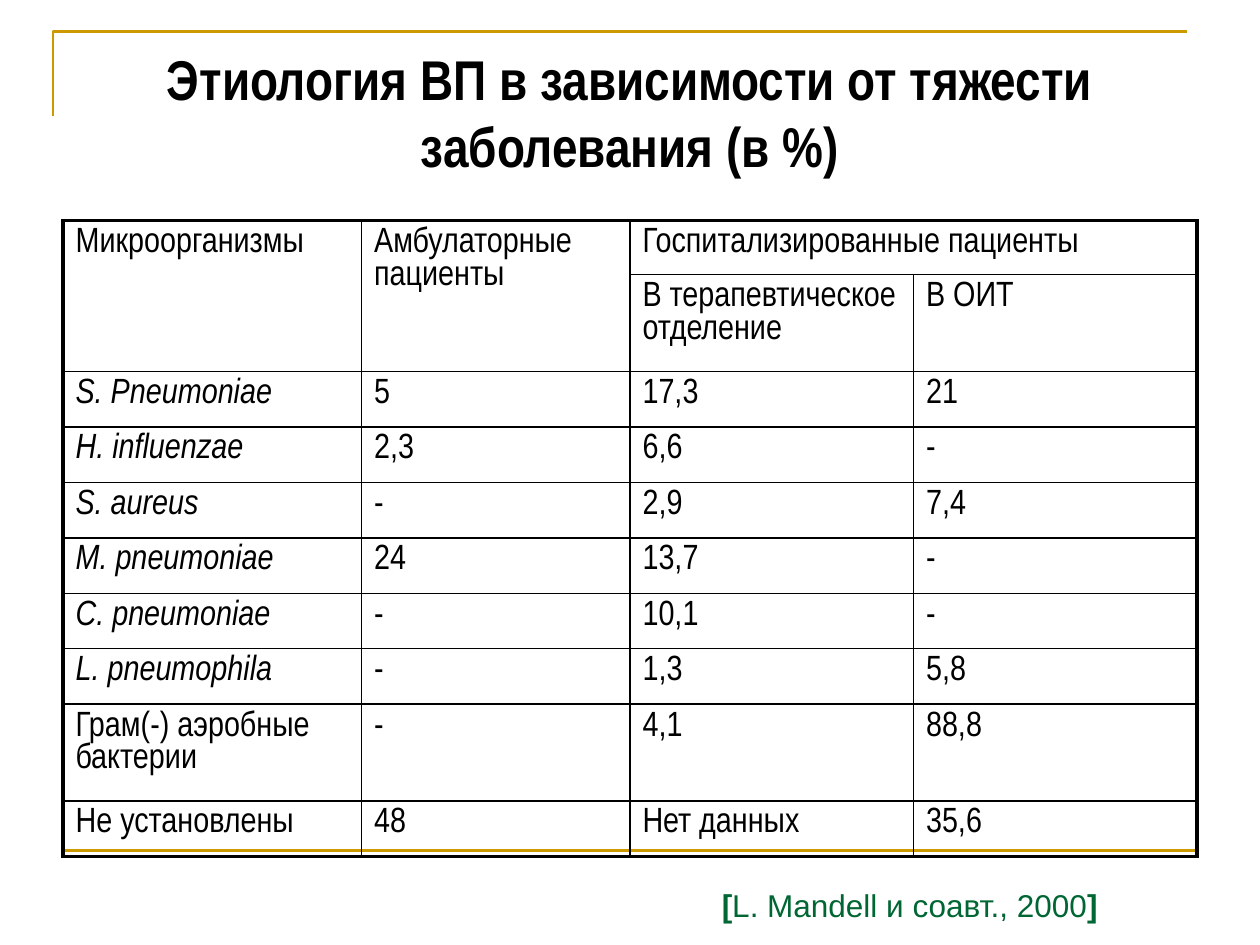
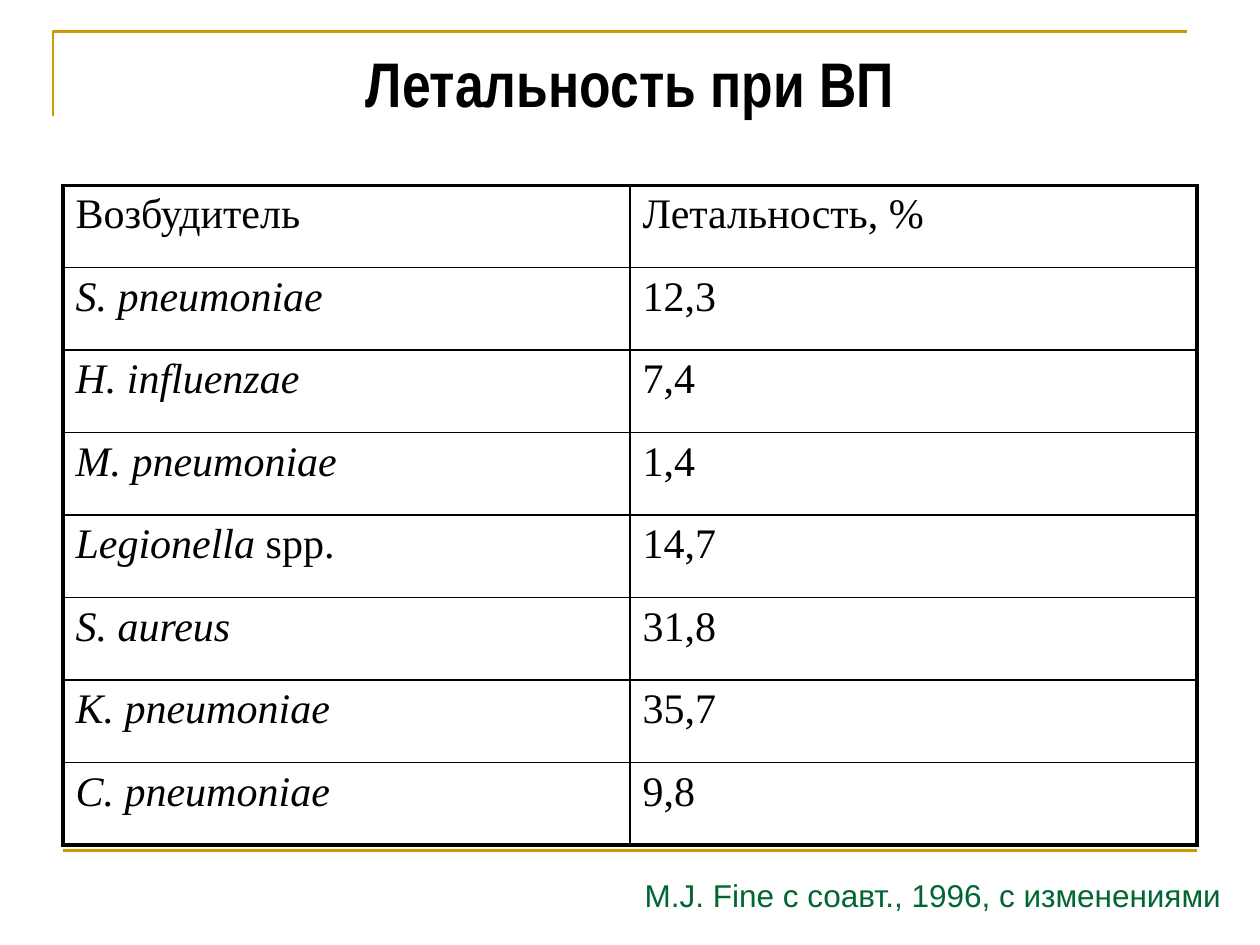
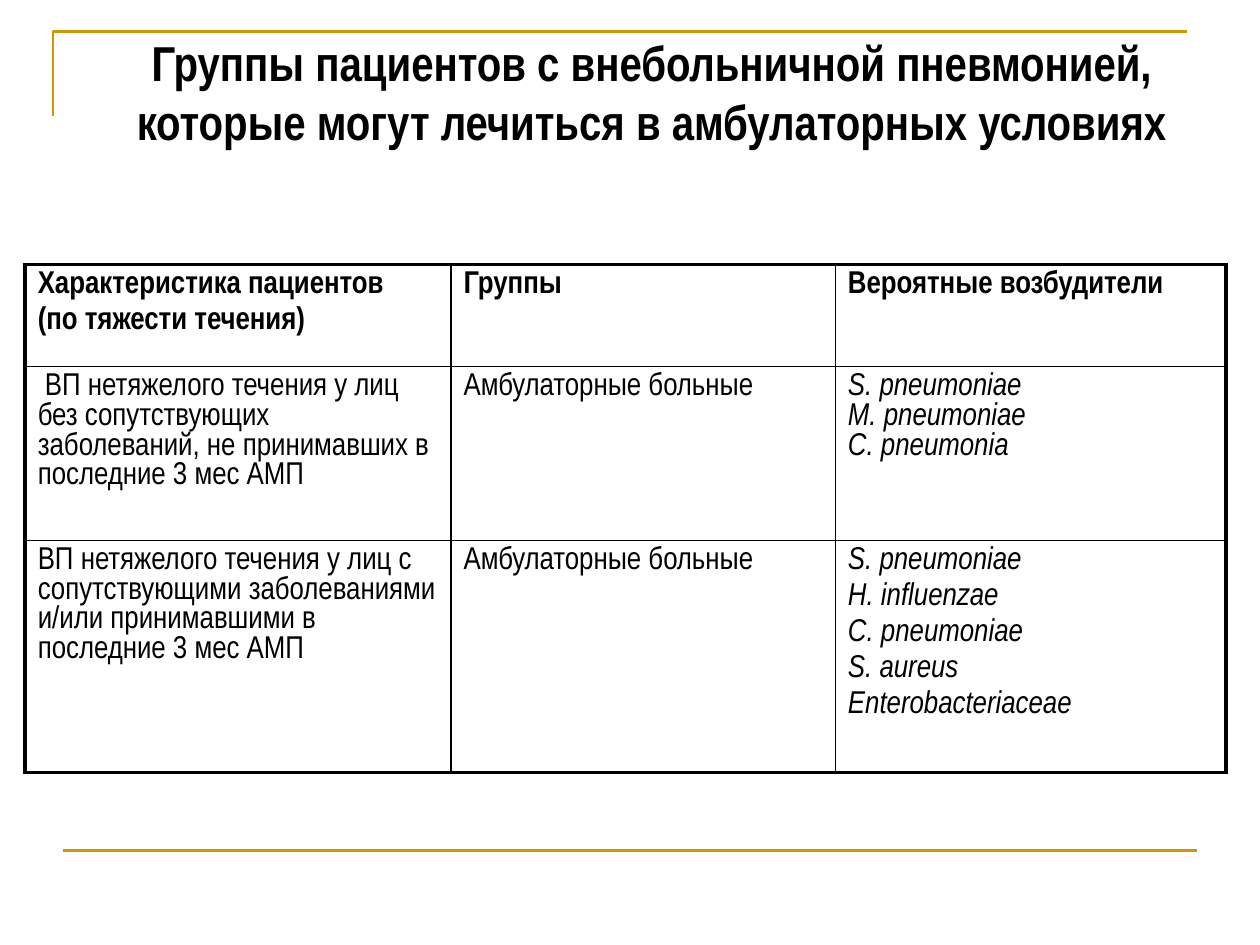
from dataclasses import dataclass

from lxml import etree
from pptx import Presentation
from pptx import util as u
from pptx.dml.color import RGBColor
from pptx.enum import shapes, text
from pptx.oxml.ns import qn


@dataclass(frozen=True)
class Theme:
    ink: str = "000000"
    gold: str = "CC9900"
    green: str = "006633"
    narrow: str = "Arial Narrow"
    serif: str = "Times New Roman"
    sans: str = "Arial"
    source_size: int = 18
    frame_line: float = 1.5
    outer_border: float = 2.25
    inner_border: float = 1


THEME = Theme()

ETIOLOGY = [
    ["Микроорганизмы", "Амбулаторные пациенты", "Госпитализированные пациенты", ""],
    ["", "", "В терапевтическое отделение", "В ОИТ"],
    ["*S. Pneumoniae*", "5", "17,3", "21"],
    ["*H. influenzae*", "2,3", "6,6", "-"],
    ["*S. aureus*", "-", "2,9", "7,4"],
    ["*M. pneumoniae*", "24", "13,7", "-"],
    ["*C. pneumoniae*", "-", "10,1", "-"],
    ["*L. pneumophila*", "-", "1,3", "5,8"],
    ["Грам(-) аэробные бактерии", "-", "4,1", "88,8"],
    ["Не установлены", "48", "Нет данных", "35,6"],
]

MORTALITY = [
    ["Возбудитель", "Летальность, %"],
    ["*S. pneumoniae*", "12,3"],
    ["*H. influenzae*", "7,4"],
    ["*M. pneumoniae*", "1,4"],
    ["*Legionella *spp.", "14,7"],
    ["*S. aureus*", "31,8"],
    ["*K. pneumoniae*", "35,7"],
    ["*C. pneumoniae*", "9,8"],
]

GROUPS = [
    ["Характеристика пациентов\n(по тяжести течения)", "Группы", "Вероятные возбудители"],
    [" ВП нетяжелого течения у лиц без сопутствующих заболеваний, "
     "не принимавших в последние 3 мес АМП",
     "Амбулаторные больные",
     "*S. pneumoniae*\v*M. pneumoniae*\v*C. pneumonia*"],
    ["ВП нетяжелого течения у лиц с сопутствующими заболеваниями "
     "и/или принимавшими в последние 3 мес АМП",
     "Амбулаторные больные",
     "*S. pneumoniae*\n*H. influenzae*\n*C. pneumoniae*\n*S. aureus*\n*Enterobacteriaceae*"],
]


def style_font(font, name, size, color=THEME.ink, bold=False):
    font.name = name
    font.size = u.Pt(size)
    font.bold = bold
    font.color.rgb = RGBColor.from_string(color)


def style_line(shape):
    shape.line.color.rgb = RGBColor.from_string(THEME.gold)
    shape.line.width = u.Pt(THEME.frame_line)


def add_frame(layout, page):
    """Draw the gold corner and rule on a page, then move them to its layout."""
    left, top, right, bottom = (u.Inches(v) for v in (0.42, 0.25, 9.42, 0.92))
    builder = page.shapes.build_freeform(left, bottom)
    builder.add_line_segments([(left, top), (right, top)], close=False)
    corner = builder.convert_to_shape()
    corner.fill.background()
    corner.shadow.inherit = False

    rule = page.shapes.add_connector(
        shapes.MSO_CONNECTOR.STRAIGHT,
        u.Inches(0.5), u.Inches(6.75), u.Inches(9.5), u.Inches(6.75))
    for shape in (corner, rule):
        style_line(shape)
        layout.shapes.element.append(shape.element)
    etree.SubElement(rule.element.spPr, qn("a:effectLst"))


def set_title(page, wording, size, left=0.5, top=0.3, height=1.25):
    title = page.shapes.title
    title.left, title.top = u.Inches(left), u.Inches(top)
    title.width, title.height = u.Inches(9), u.Inches(height)
    frame = title.text_frame
    frame.text = wording
    frame.vertical_anchor = text.MSO_ANCHOR.TOP
    frame.auto_size = text.MSO_AUTO_SIZE.NONE
    para = frame.paragraphs[0]
    para.alignment = text.PP_ALIGN.CENTER
    style_font(para.font, THEME.narrow, size, bold=True)


def add_source(page, left, top, width, spans, wrap=True, align=text.PP_ALIGN.LEFT):
    """Add the source line; spans are (wording, bold) pairs."""
    box = page.shapes.add_textbox(*(u.Inches(v) for v in (left, top, width, 0.4)))
    frame = box.text_frame
    frame.word_wrap = wrap
    frame.auto_size = text.MSO_AUTO_SIZE.SHAPE_TO_FIT_TEXT
    para = frame.paragraphs[0]
    para.alignment = align
    style_font(para.font, THEME.sans, THEME.source_size, THEME.green)
    for wording, bold in spans:
        span = para.add_run()
        span.text = wording
        span.font.bold = bold


def set_borders(cell, widths):
    """Set left, right, top and bottom border widths in points."""
    properties = cell._tc.get_or_add_tcPr()
    for side, width in zip("LRTB", widths):
        line = etree.SubElement(properties, qn(f"a:ln{side}"), w=str(u.Pt(width)))
        fill = etree.SubElement(line, qn("a:solidFill"))
        etree.SubElement(fill, qn("a:srgbClr"), val=THEME.ink)


def write_cell(cell, wording, font_name, size, bold):
    """Write paragraphs split by newlines; asterisks enclose italics."""
    frame = cell.text_frame
    for index, block in enumerate(wording.split("\n")):
        para = frame.add_paragraph() if index else frame.paragraphs[0]
        para.space_before = u.Pt(size * 0.2)
        style_font(para.font, font_name, size, bold=bold)
        for row, line in enumerate(block.split("\v")):
            if row:
                para.add_line_break()
            for part, piece in enumerate(line.split("*")):
                if piece:
                    span = para.add_run()
                    span.text = piece
                    span.font.italic = part % 2 == 1


def add_grid(page, left, top, columns, heights, rows, font_name, size,
             bold_header=False, merges=()):
    """Add a table with a heavy outline; merges are pairs of (row, column)."""
    table = page.shapes.add_table(
        len(rows), len(columns), u.Inches(left), u.Inches(top),
        u.Inches(sum(columns)), u.Inches(sum(heights))).table
    table.first_row = table.horz_banding = False
    for column, width in zip(table.columns, columns):
        column.width = u.Inches(width)
    for row, height in zip(table.rows, heights):
        row.height = u.Inches(height)
    for first, last in merges:
        table.cell(*first).merge(table.cell(*last))

    last_row, last_column = len(rows) - 1, len(columns) - 1
    for r, row in enumerate(rows):
        for c, wording in enumerate(row):
            cell = table.cell(r, c)
            right = c + cell.span_width - 1 if cell.is_merge_origin else c
            at_edge = (c == 0, right == last_column, r == 0, r == last_row)
            set_borders(cell, [THEME.outer_border if edge else THEME.inner_border
                               for edge in at_edge])
            cell.fill.background()
            if wording:
                write_cell(cell, wording, font_name, size, bold_header and r == 0)


def build_etiology(page):
    set_title(page, "Этиология ВП в зависимости от тяжести заболевания (в %)", 32)
    add_grid(page, 0.5, 1.75, [2.37, 2.13, 2.25, 2.25],
             [0.43, 0.77] + [0.44] * 6 + [0.77, 0.44],
             ETIOLOGY, THEME.narrow, 20,
             merges=[((0, 0), (1, 0)), ((0, 1), (1, 1)), ((0, 2), (0, 3))])
    add_source(page, 5.63, 6.98, 3.21,
               [("[", True), ("L. Mandell и соавт., 2000", False), ("]", True)])


def build_mortality(page):
    set_title(page, "Летальность при ВП", 36)
    add_grid(page, 0.5, 1.47, [4.5, 4.5], [5.24 / len(MORTALITY)] * len(MORTALITY),
             MORTALITY, THEME.serif, 24)
    add_source(page, 5, 6.9, 4.81, [("M.J. Fine с соавт., 1996, с изменениями", False)],
               wrap=False, align=text.PP_ALIGN.CENTER)


def build_groups(page):
    set_title(page, "Группы пациентов с внебольничной пневмонией, "
              "которые могут лечиться в амбулаторных условиях", 28,
              left=0.67, top=0.21, height=1.5)
    add_grid(page, 0.2, 2.1, [3.38, 3.05, 3.1], [0.81, 1.38, 1.84],
             GROUPS, THEME.narrow, 18, bold_header=True)


def main():
    deck = Presentation()
    deck.slide_width, deck.slide_height = u.Inches(10), u.Inches(7.5)
    layout = deck.slide_layouts.get_by_name("Title Only")
    builders = (build_etiology, build_mortality, build_groups)
    pages = [deck.slides.add_slide(layout) for _ in builders]
    add_frame(layout, pages[0])
    for build, page in zip(builders, pages):
        build(page)
    deck.save("out.pptx")


if __name__ == "__main__":
    main()
